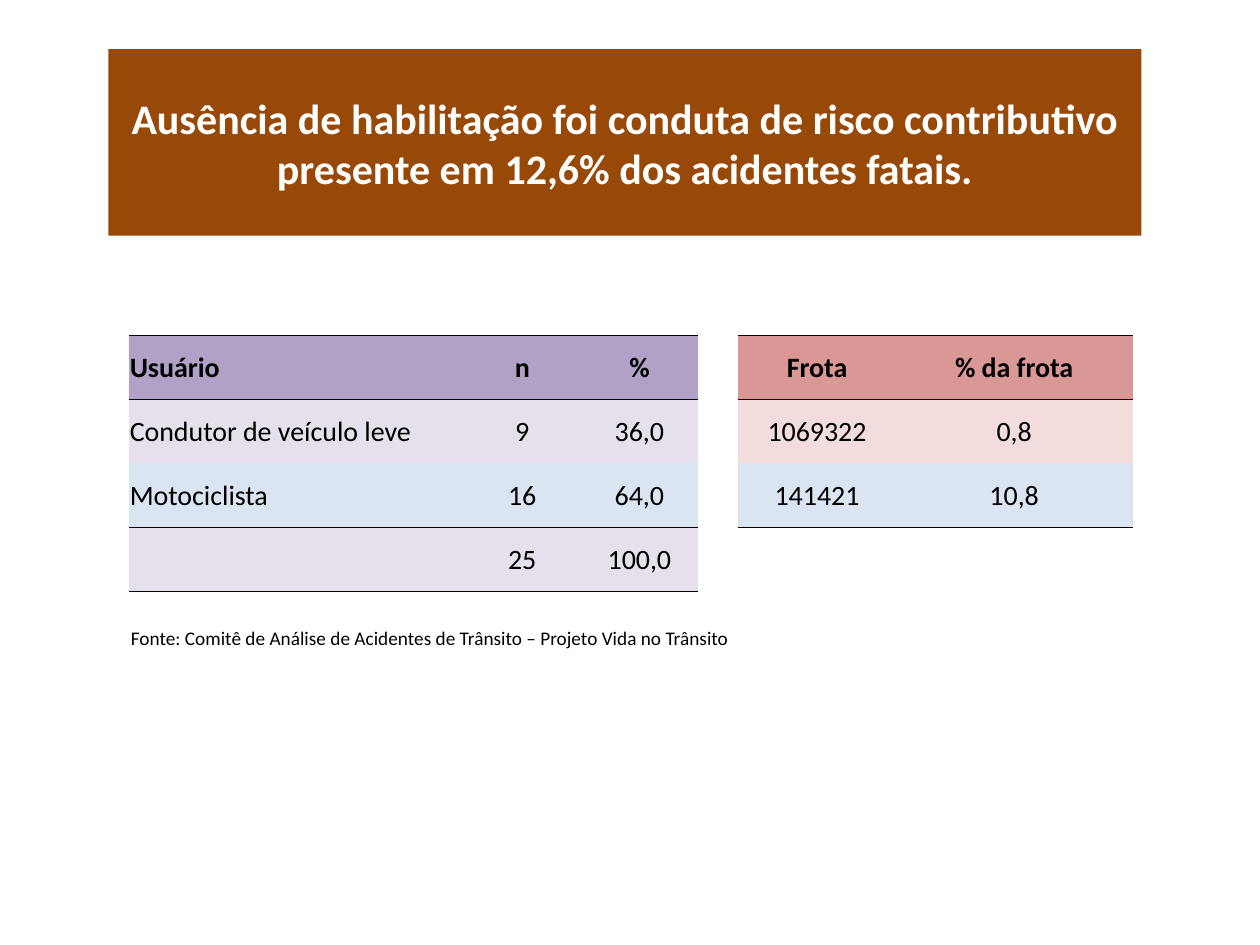
from lxml.etree import SubElement
from pptx import Presentation
from pptx.dml.color import RGBColor
from pptx.enum.shapes import MSO_SHAPE as Shape
from pptx.enum.text import MSO_ANCHOR as Anchor, PP_ALIGN as Align
from pptx.oxml.ns import qn
from pptx.util import Inches, Pt

COLUMNS = [2.66, 0.93, 0.93, 0.32, 1.25, 1.88]
ROWS = [
    ["Usuário", "n", "%", "", "Frota", "% da frota"],
    ["Condutor de veículo leve", "9", "36,0", "", "1069322", "0,8"],
    ["Motociclista", "16", "64,0", "", "141421", "10,8"],
    ["", "25", "100,0", "", "", ""],
]
USER_FILLS = ["B2A1C7", "E5E0EC", "DBE5F1", "E5E0EC"]
FLEET_FILLS = ["D99795", "F2DDDC", "DBE5F1", None]
USER_RULES, FLEET_RULES = {0, 1, 3, 4}, {0, 1, 3}
COLUMN_STYLES = [(USER_FILLS, USER_RULES)] * 3 + [([None] * 4, set())] + [(FLEET_FILLS, FLEET_RULES)] * 2


def color(value):
    """Turn a hex string into a colour."""
    return RGBColor.from_string(value)


def write(frame, text, size, hue="000000", bold=False, align=Align.LEFT):
    """Write one paragraph in a text frame."""
    paragraph = frame.paragraphs[0]
    paragraph.text = text
    paragraph.alignment = align
    font = paragraph.font
    font.name, font.size, font.bold = "Calibri", Pt(size), bold
    font.color.rgb = color(hue)


def set_borders(cell, top, bottom):
    """Draw the wanted horizontal rules and clear the other sides."""
    properties = cell._tc.get_or_add_tcPr()
    for side, visible in (("L", False), ("R", False), ("T", top), ("B", bottom)):
        line = SubElement(properties, qn(f"a:ln{side}"), w=str(Pt(0.5)))
        if visible:
            fill = SubElement(line, qn("a:solidFill"))
            SubElement(fill, qn("a:srgbClr"), val="000000")
        else:
            SubElement(line, qn("a:noFill"))


def add_title(slide, box):
    """Add the filled title banner."""
    banner = slide.shapes.add_shape(Shape.RECTANGLE, *map(Inches, box))
    banner.shadow.inherit = False
    banner.fill.solid()
    banner.fill.fore_color.rgb = color("984807")
    banner.line.fill.background()
    frame = banner.text_frame
    frame.word_wrap = True
    frame.vertical_anchor = Anchor.MIDDLE
    write(frame, "Ausência de habilitação foi conduta de risco contributivo presente em 12,6% dos acidentes fatais.",
          24, "FFFFFF", True, Align.CENTER)


def fill_cell(cell, row, column):
    """Fill, rule and write one table cell."""
    fills, rules = COLUMN_STYLES[column]
    set_borders(cell, row in rules, row + 1 in rules)
    if fills[row]:
        cell.fill.solid()
        cell.fill.fore_color.rgb = color(fills[row])
    else:
        cell.fill.background()
    cell.vertical_anchor = Anchor.MIDDLE
    cell.margin_left = cell.margin_right = cell.margin_top = Inches(0.01)
    cell.margin_bottom = 0
    write(cell.text_frame, ROWS[row][column], 16, bold=row == 0,
          align=Align.CENTER if column else Align.LEFT)


def add_user_table(slide, box):
    """Add the table of users and fleet."""
    table = slide.shapes.add_table(len(ROWS), len(COLUMNS), *map(Inches, box)).table
    table.first_row = table.horz_banding = False
    for column, width in zip(table.columns, COLUMNS):
        column.width = Inches(width)
    for row in range(len(ROWS)):
        for column in range(len(COLUMNS)):
            fill_cell(table.cell(row, column), row, column)


def add_source(slide, box):
    """Add the source line."""
    frame = slide.shapes.add_textbox(*map(Inches, box)).text_frame
    frame.word_wrap = True
    write(frame, "Fonte: Comitê de Análise de Acidentes de Trânsito – Projeto Vida no Trânsito", 11)


def main():
    """Build and save the slide."""
    presentation = Presentation()
    presentation.slide_width, presentation.slide_height = Inches(10), Inches(7.5)
    slide = presentation.slides.add_slide(presentation.slide_layouts[6])
    add_title(slide, (0.86, 0.39, 8.2, 1.48))
    add_user_table(slide, (1.02, 2.66, sum(COLUMNS), 2.03))
    add_source(slide, (0.94, 4.92, 6.02, 0.29))
    presentation.save("out.pptx")


if __name__ == "__main__":
    main()
